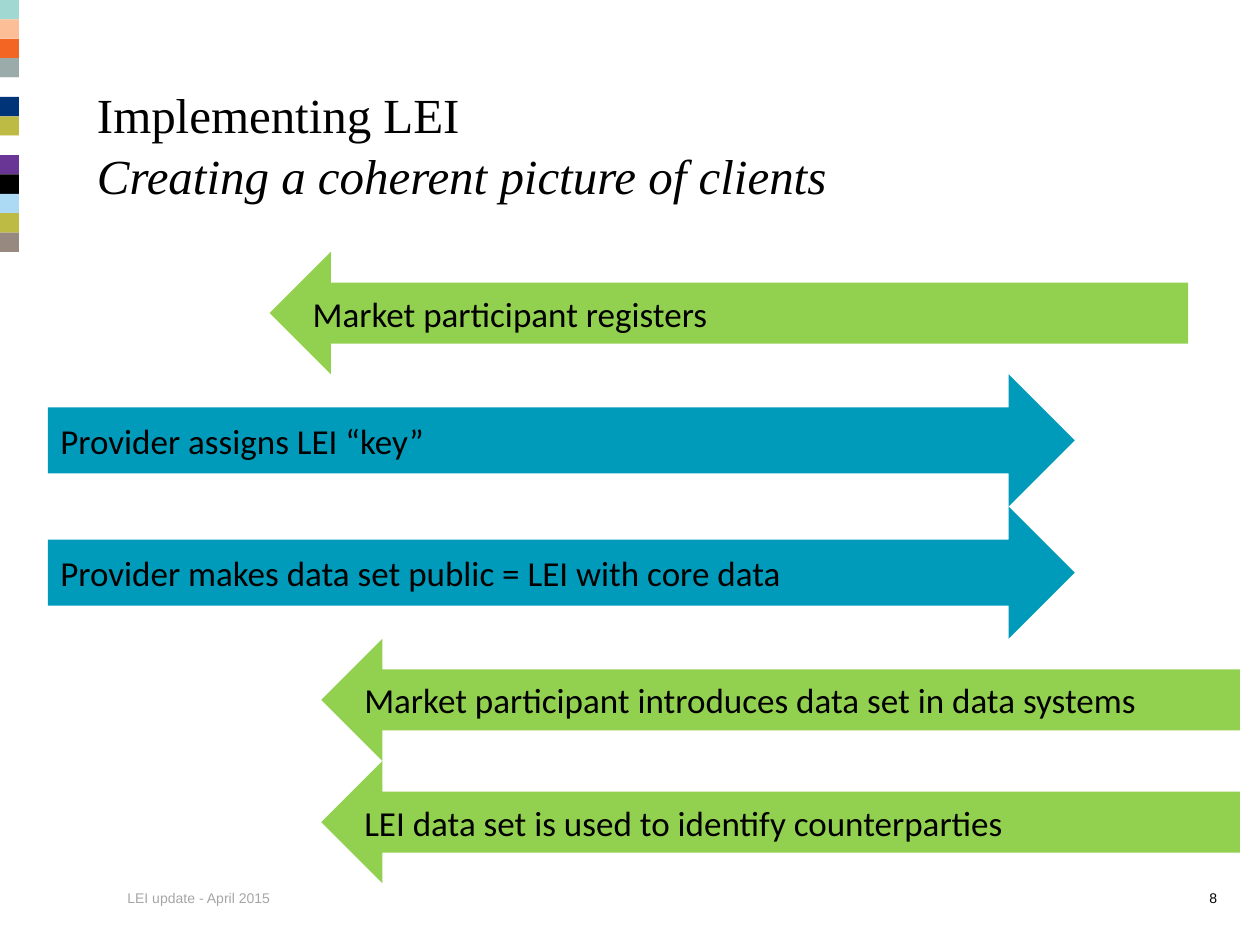
from pptx import Presentation
from pptx.dml.color import RGBColor
from pptx.enum.shapes import MSO_SHAPE as Shape
from pptx.enum.text import MSO_ANCHOR as Anchor, PP_ALIGN as Align
from pptx.util import Inches, Pt

BLACK = RGBColor(0x00, 0x00, 0x00)
WHITE = RGBColor(0xFF, 0xFF, 0xFF)
GREY = RGBColor(0xA6, 0xA6, 0xA6)
GREEN = RGBColor(0x92, 0xD0, 0x50)
BLUE = RGBColor(0x00, 0x9B, 0xBB)
OLIVE = RGBColor(0xBE, 0xBB, 0x45)
STRIP_COLORS = [
    RGBColor(0xA1, 0xD9, 0xD2), RGBColor(0xFB, 0xBE, 0x97),
    RGBColor(0xF2, 0x65, 0x22), RGBColor(0x9A, 0xAB, 0xA9),
    WHITE, RGBColor(0x00, 0x34, 0x78), OLIVE, WHITE,
    RGBColor(0x69, 0x36, 0x95), BLACK, RGBColor(0xAC, 0xD9, 0xF4),
    OLIVE, RGBColor(0x98, 0x89, 0x80),
]
STRIP_HEIGHT = 2

TO_PROVIDER, TO_MARKET = Shape.LEFT_ARROW, Shape.RIGHT_ARROW
ARROW_SIZES = {TO_PROVIDER: (7.29, 0.97), TO_MARKET: (8.15, 1.05)}
ARROW_COLORS = {TO_PROVIDER: GREEN, TO_MARKET: BLUE}
STEPS = [
    ("Market participant registers", TO_PROVIDER, 2.14),
    ("Provider assigns LEI “key”", TO_MARKET, 0.38),
    ("Provider makes data set public = LEI with core data", TO_MARKET, 0.38),
    ("Market participant introduces data set in data systems", TO_PROVIDER, 2.55),
    ("LEI data set is used to identify counterparties", TO_PROVIDER, 2.55),
]


class SlideBuilder:
    title_font, body_font, footer_font = "Times New Roman", "Calibri", "Arial"
    title_size, body_size, footer_size = Pt(28), Pt(20), Pt(8)

    def __init__(self, page):
        self.page = page

    def format_text(self, frame, font, size, color, align=Align.LEFT):
        frame.word_wrap = True
        for para in frame.paragraphs:
            para.alignment = align
            for span in para.runs:
                span.font.name = font
                span.font.size = size
                span.font.color.rgb = color

    def filled_shape(self, kind, left, top, width, height, color):
        shape = self.page.shapes.add_shape(
            kind, Inches(left), Inches(top), Inches(width), Inches(height))
        shape.shadow.inherit = False
        shape.fill.solid()
        shape.fill.fore_color.rgb = color
        shape.line.fill.background()
        return shape

    def color_strip(self, colors, height):
        step = height / len(colors)
        for index, color in enumerate(colors):
            self.filled_shape(Shape.RECTANGLE, 0, index * step, 0.15, step, color)

    def text_box(self, left, top, width, height):
        box = self.page.shapes.add_textbox(
            Inches(left), Inches(top), Inches(width), Inches(height))
        frame = box.text_frame
        frame.margin_left = frame.margin_right = Inches(0.09)
        frame.margin_top = frame.margin_bottom = Inches(0.04)
        return frame

    def title(self, heading, subtitle):
        frame = self.text_box(0.68, 0.58, 8.33, 1.25)
        frame.margin_top = Inches(0.08)
        frame.text = f"{heading}\v{subtitle}"
        para = frame.paragraphs[0]
        para.line_spacing = 1.03
        para.runs[1].font.italic = True
        self.format_text(frame, self.title_font, self.title_size, BLACK)

    def footer(self, text, left, width, color, align=Align.LEFT):
        frame = self.text_box(left, 7, width, 0.25)
        frame.text = text
        frame.vertical_anchor = Anchor.MIDDLE
        self.format_text(frame, self.footer_font, self.footer_size, color, align)

    def arrow(self, text, kind, left, top):
        width, height = ARROW_SIZES[kind]
        shape = self.filled_shape(kind, left, top, width, height, ARROW_COLORS[kind])
        frame = shape.text_frame
        frame.text = text
        frame.vertical_anchor = Anchor.MIDDLE
        self.format_text(frame, self.body_font, self.body_size, BLACK)

    def arrow_stack(self, steps, top):
        """Stack the arrows downwards, each touching the one above."""
        for text, kind, left in steps:
            self.arrow(text, kind, left, top)
            top += ARROW_SIZES[kind][1]


def main():
    deck = Presentation()
    deck.slide_width, deck.slide_height = Inches(10), Inches(7.5)
    builder = SlideBuilder(deck.slides.add_slide(deck.slide_layouts[6]))
    builder.color_strip(STRIP_COLORS, STRIP_HEIGHT)
    builder.title("Implementing LEI", "Creating a coherent picture of clients")
    builder.footer("LEI update - April 2015", 0.92, 6.21, GREY)
    builder.footer("8", 8.92, 0.83, BLACK, Align.RIGHT)
    builder.arrow_stack(STEPS, 2)
    deck.save("out.pptx")


if __name__ == "__main__":
    main()
